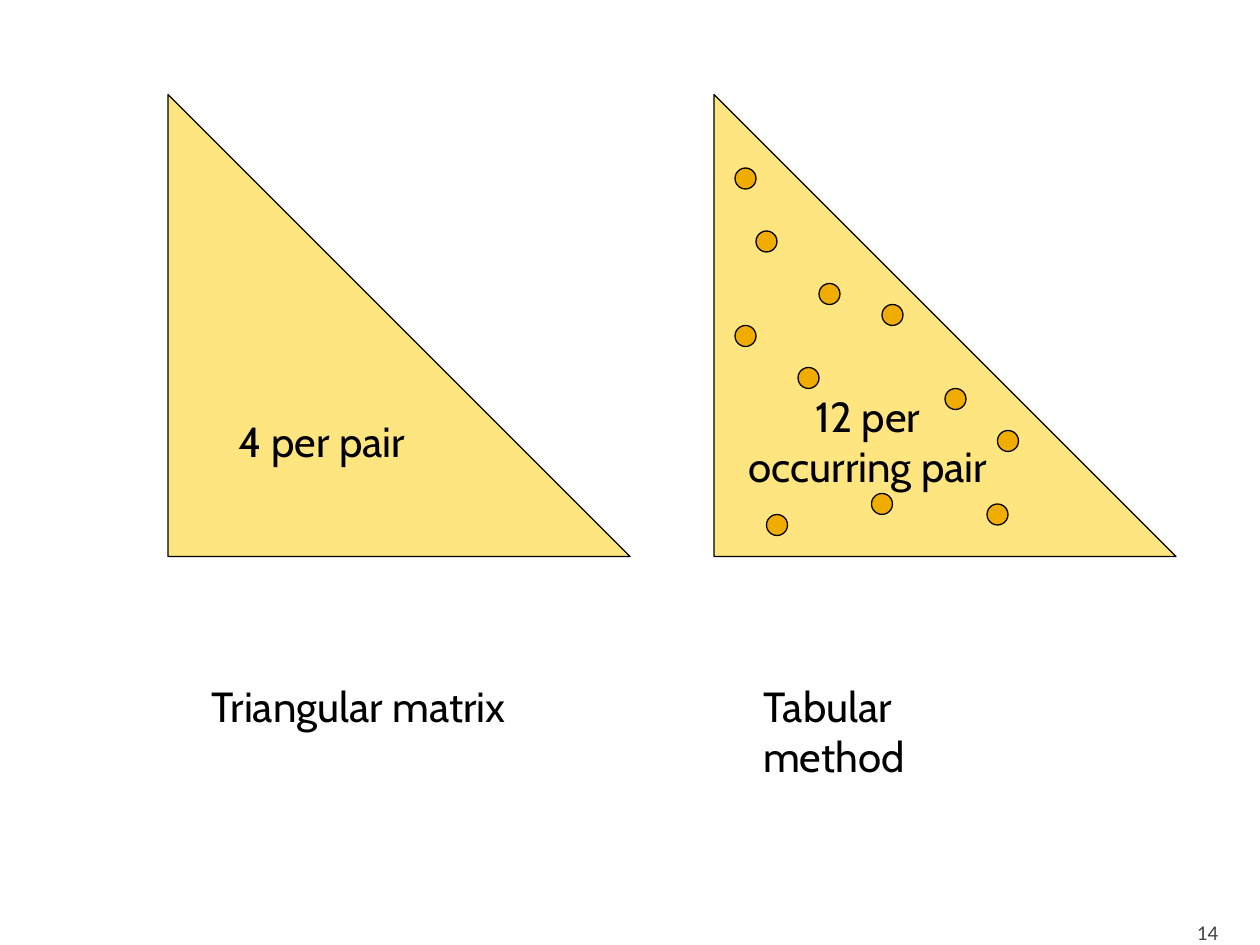
from lxml import etree
from pptx import Presentation
from pptx import util as u
from pptx.dml.color import RGBColor
from pptx.enum import shapes, text
from pptx.oxml.ns import qn

COLS, ROWS = 120, 90
HUES = {"ink": "000000", "sun": "FFCC00", "dot": "F0AD00", "gray": "454545"}
SHAPE = shapes.MSO_SHAPE
ALIGN = text.PP_ALIGN
ANCHOR = text.MSO_ANCHOR

SIDE, TOP = 44, 9
LEFTS = {"matrix": 16, "table": 68}
DOT = 2
DOTS = [(95, 41), (83, 47), (84, 29), (72, 22), (90, 37), (94, 48),
        (73, 49), (76, 35), (78, 27), (70, 16), (70, 31)]


def hue(name):
    return RGBColor.from_string(HUES[name])


class Deck:
    """Places elements on a grid of COLS by ROWS cells."""

    def __init__(self):
        self.file = Presentation()
        self.file.slide_width = u.Inches(10)
        self.file.slide_height = u.Inches(7.5)
        self.slide = self.file.slides.add_slide(self.file.slide_layouts[6])
        self.font = {"name": "Cabin", "size": u.Pt(24)}

    def cells(self, left, top, width, height):
        col = self.file.slide_width / COLS
        row = self.file.slide_height / ROWS
        return [round(n) for n in
                (left * col, top * row, width * col, height * row)]

    def words(self, shape, lines, color="ink", align=ALIGN.LEFT, font=None, **frame):
        for key, val in frame.items():
            setattr(shape.text_frame, key, val)
        shape.text_frame.text = "\n".join(lines)
        for para in shape.text_frame.paragraphs:
            para.alignment = align
            for run in para.runs:
                for key, val in {**self.font, **(font or {})}.items():
                    setattr(run.font, key, val)
                run.font.color.rgb = hue(color)

    def label(self, box, line, **style):
        shape = self.slide.shapes.add_textbox(*self.cells(*box))
        self.words(shape, [line], word_wrap=True, **style)

    def shape(self, kind, box, fill, alpha=None):
        shape = self.slide.shapes.add_shape(kind, *self.cells(*box))
        shape.shadow.inherit = False
        shape.fill.solid()
        shape.fill.fore_color.rgb = hue(fill)
        if alpha:
            tint = next(shape.element.spPr.iter(qn("a:srgbClr")))
            etree.SubElement(tint, qn("a:alpha")).set("val", str(alpha * 1000))
        shape.line.color.rgb = hue("ink")
        shape.line.width = u.Pt(0.75)
        return shape

    def wedge(self, left, lines):
        shape = self.shape(SHAPE.RIGHT_TRIANGLE, (left, TOP, SIDE, SIDE), "sun", 50)
        self.words(shape, lines, align=ALIGN.CENTER, word_wrap=False,
                   vertical_anchor=ANCHOR.MIDDLE)


def main():
    deck = Deck()
    deck.label((107.6, 86.4, 9.6, 3.6), "14", color="gray", align=ALIGN.RIGHT,
               font={"name": "Calibri", "size": u.Pt(12)},
               vertical_anchor=ANCHOR.BOTTOM, margin_bottom=0)
    deck.wedge(LEFTS["matrix"], ["4 per pair"])
    deck.label((19, 64.2, 31, 6), "Triangular matrix")
    deck.label((71.5, 64.2, 28, 6), "Tabular method")
    deck.wedge(LEFTS["table"], ["12 per", "occurring pair"])
    for col, row in DOTS:
        deck.shape(SHAPE.OVAL, (col, row, DOT, DOT), "dot")
    deck.file.save("out.pptx")


if __name__ == "__main__":
    main()
